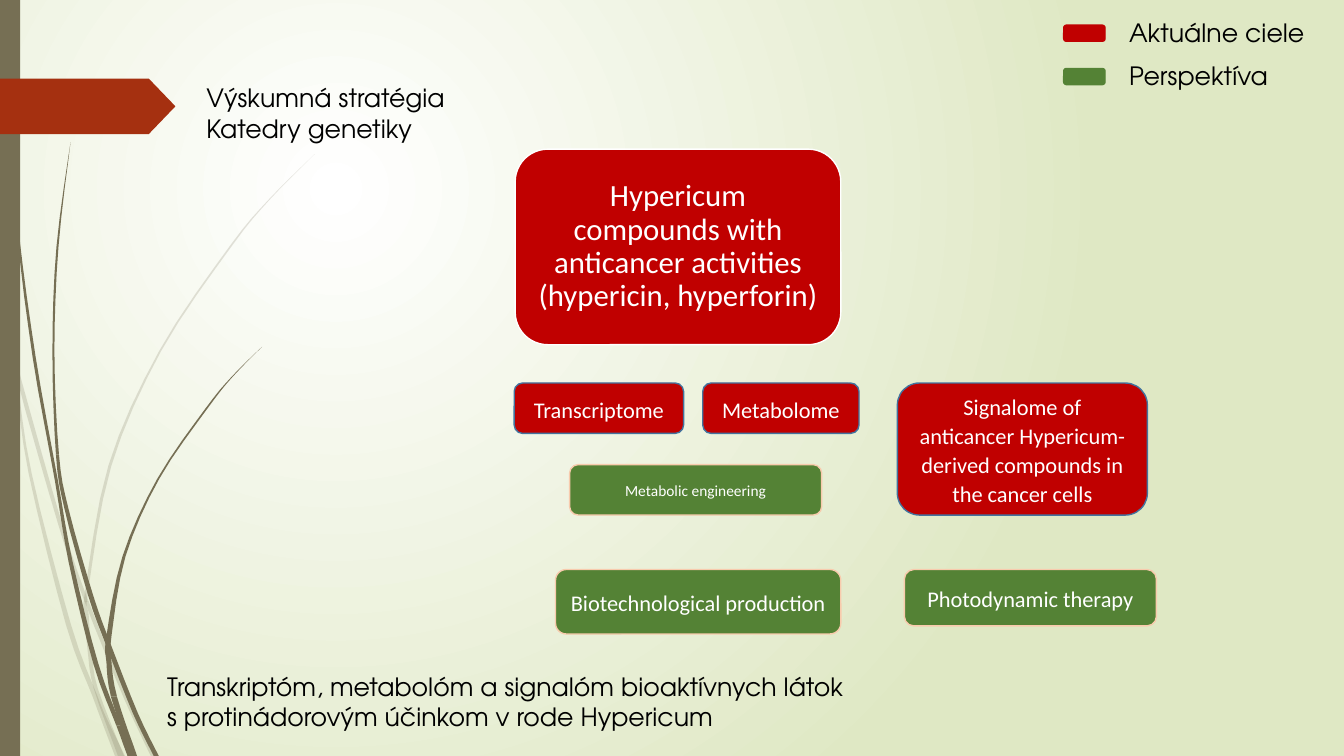
from dataclasses import dataclass

from lxml import etree
from pptx import Presentation
from pptx.dml.color import RGBColor
from pptx.enum.shapes import MSO_SHAPE
from pptx.enum.text import MSO_ANCHOR, PP_ALIGN
from pptx.oxml.ns import qn
from pptx.util import Inches, Pt

RECTANGLE = MSO_SHAPE.RECTANGLE
ROUNDED = MSO_SHAPE.ROUNDED_RECTANGLE
TAG = MSO_SHAPE.PENTAGON
TOP, MIDDLE = MSO_ANCHOR.TOP, MSO_ANCHOR.MIDDLE
LEFT, CENTER = PP_ALIGN.LEFT, PP_ALIGN.CENTER
UNITS_PER_INCH = 1000
CURVE_STEPS = 4


@dataclass(frozen=True)
class Theme:
    white: str = "FFFFFF"
    black: str = "000000"
    meadow: str = "DFE8C4"
    stalk: str = "766F54"
    rust: str = "A53010"
    current: str = "C00000"
    future: str = "548235"
    current_line: str = "43739E"
    future_line: str = "F8CBAD"
    heading_font: str = "TeX Gyre Adventor"
    box_font: str = "Calibri"
    heading_size: int = 18
    lead_size: int = 22
    box_size: int = 16
    small_size: int = 11


THEME = Theme()

# Each blade pairs its joints with knots of centre x, y and width, tip to root.
PALE_BLADES = [
    ((1, 6), [(0.02, 2.9, 0.03), (0.11, 3.5, 0.02), (0.16, 3.76, 0.02), (0.3, 4.7, 0.03),
              (0.68, 6.2, 0.05), (0.94, 6.9, 0.05), (1.03, 7.13, 0.06), (1.19, 7.5, 0.1)]),
    ((3,), [(0.14, 3.45, 0), (0.19, 3.76, 0.04), (0.6, 5.21, 0.04), (0.86, 5.97, 0.04),
            (1.25, 6.93, 0.04), (1.52, 7.5, 0.05)]),
    ((5, 6, 8), [(3.12, 1.53, 0), (2.68, 1.97, 0.01), (2.29, 2.44, 0.02), (1.59, 3.48, 0.02),
                 (1.09, 4.62, 0.03), (0.86, 5.86, 0.03), (0.86, 6.1, 0.04),
                 (0.89, 6.46, 0.04), (0.95, 6.83, 0.04), (1.2, 7.5, 0.06)]),
]
DARK_BLADES = [
    ((4, 7), [(0.04, 0, 0.01), (0.07, 1.1, 0.01), (0.18, 2.33, 0.02), (0.34, 3.55, 0.03),
              (0.56, 4.77, 0.03), (0.7, 5.57, 0.04), (0.95, 6.58, 0.05),
              (1.18, 7.2, 0.05), (1.31, 7.5, 0.09)]),
    ((3, 4, 6), [(0.7, 1.41, 0), (0.57, 2.45, 0.02), (0.53, 3.49, 0.02), (0.57, 4.51, 0.03),
                 (0.66, 5.05, 0.04), (0.9, 5.91, 0.05), (1.08, 6.41, 0.05),
                 (1.34, 7.07, 0.05), (1.55, 7.5, 0.05)]),
    ((5, 6, 7), [(2.6, 3.44, 0), (2.31, 3.73, 0.01), (2.05, 4.05, 0.02), (1.57, 4.75, 0.02),
                 (1.23, 5.52, 0.03), (1.08, 6.32, 0.05), (1.08, 6.56, 0.05),
                 (1.13, 6.91, 0.06), (1.33, 7.5, 0.06)]),
]


def add_text(shape, text, font=THEME.box_font, size=THEME.box_size, color=THEME.white,
             align=CENTER, anchor=MIDDLE, inset=None, spacing=None, after=None):
    frame = shape.text_frame
    frame.word_wrap = True
    frame.vertical_anchor = anchor
    if inset is not None:
        frame.margin_left = frame.margin_right = Inches(inset)
        frame.margin_top = frame.margin_bottom = Inches(inset)
    frame.text = text
    for paragraph in frame.paragraphs:
        paragraph.alignment = align
        paragraph.line_spacing = spacing
        paragraph.space_after = after
        paragraph.font.name = font
        paragraph.font.size = Pt(size)
        paragraph.font.color.rgb = RGBColor.from_string(color)


def style(shape, fill, line=None):
    shape.shadow.inherit = False
    shape.fill.solid()
    shape.fill.fore_color.rgb = RGBColor.from_string(fill)
    if line:
        shape.line.color.rgb = RGBColor.from_string(line)
        shape.line.width = Pt(1)
    else:
        shape.line.fill.background()


def add_block(slide, kind, box, fill, line=None):
    shape = slide.shapes.add_shape(kind, *map(Inches, box))
    style(shape, fill, line)
    return shape


def add_heading(slide, box, text, anchor=TOP):
    shape = slide.shapes.add_textbox(*map(Inches, box))
    add_text(shape, text, font=THEME.heading_font, size=THEME.heading_size,
             color=THEME.black, align=LEFT, anchor=anchor)


def paint_background(slide):
    fill = slide.background.fill
    fill.gradient()
    for stop, color in zip(fill.gradient_stops, (THEME.white, THEME.meadow)):
        stop.color.rgb = RGBColor.from_string(color)
    gradient = slide.element.find(".//" + qn("a:gradFill"))
    gradient.remove(gradient.find(qn("a:lin")))
    circle = etree.Element(qn("a:path"), path="circle")
    etree.SubElement(circle, qn("a:fillToRect"), l="50000", t="50000", r="100000", b="100000")
    gradient.find(qn("a:gsLst")).addnext(circle)


def smooth(knots):
    padded = [knots[0], *knots, knots[-1]]
    for before, start, end, after in zip(padded, padded[1:], padded[2:], padded[3:]):
        for step in range(CURVE_STEPS):
            t = step / CURVE_STEPS
            yield tuple(
                b + t * (c - a) / 2 + t**2 * (2 * a - 5 * b + 4 * c - d) / 2
                + t**3 * (3 * b - a - 3 * c + d) / 2
                for a, b, c, d in zip(before, start, end, after))
    yield knots[-1]


def add_section(slide, origin, curve, opacity):
    left, top = origin
    edges = [(left + x - w / 2, top + y) for x, y, w in curve]
    edges += [(left + x + w / 2, top + y) for x, y, w in reversed(curve)]
    points = [(x * UNITS_PER_INCH, y * UNITS_PER_INCH) for x, y in edges]
    builder = slide.shapes.build_freeform(*points[0], scale=Inches(1) / UNITS_PER_INCH)
    builder.add_line_segments(points[1:], close=True)
    section = builder.convert_to_shape()
    style(section, THEME.stalk)
    if opacity < 100:
        color = section.element.spPr.find(".//" + qn("a:srgbClr"))
        etree.SubElement(color, qn("a:alpha"), val=str(opacity * 1000))


def add_blade(slide, origin, joints, knots, opacity):
    curve = list(smooth(knots))
    for start, end in zip((0, *joints), (*joints, len(knots) - 1)):
        add_section(slide, origin, curve[start * CURVE_STEPS:end * CURVE_STEPS + 1], opacity)


def add_side_decoration(slide, box):
    left, top, width, height = box
    for blades, opacity in ((PALE_BLADES, 20), (DARK_BLADES, 100)):
        for joints, knots in blades:
            add_blade(slide, (left, top), joints, knots, opacity)
    add_block(slide, RECTANGLE, (left, top, 0.2, height), THEME.stalk)
    tag = add_block(slide, TAG, (left, top + 0.78, width, 0.55), THEME.rust)
    tag.adjustments[0] = 0.48


def add_strategy_map(slide, box):
    left, top = box[:2]
    lead = add_block(slide, ROUNDED, (left + 0.01, top, 3.23, 1.94), THEME.current, THEME.white)
    add_text(lead, "Hypericum compounds with anticancer activities (hypericin, hyperforin)",
             size=THEME.lead_size, inset=0.09, spacing=0.9)
    current = (THEME.current, THEME.current_line)
    future = (THEME.future, THEME.future_line)
    for x, y, width, height, colors, size, text in (
        (0, 2.32, 1.68, 0.5, current, THEME.box_size, "Transcriptome"),
        (1.87, 2.32, 1.55, 0.5, current, THEME.box_size, "Metabolome"),
        (3.8, 2.32, 2.48, 1.31, current, THEME.box_size,
         "Signalome of anticancer Hypericum-derived compounds in the cancer cells"),
        (0.55, 3.13, 2.5, 0.5, future, THEME.small_size, "Metabolic engineering"),
        (0.41, 4.17, 2.83, 0.64, future, THEME.box_size, "Biotechnological production"),
        (3.87, 4.17, 2.5, 0.56, future, THEME.box_size, "Photodynamic therapy"),
    ):
        block = add_block(slide, ROUNDED, (left + x, top + y, width, height), *colors)
        add_text(block, text, size=size, spacing=1.07, after=Pt(8))


def add_legend(slide, box):
    left, top, width, height = box
    entries = ((THEME.current, "Aktuálne ciele"), (THEME.future, "Perspektíva"))
    pitch = height / len(entries)
    for index, (color, label) in enumerate(entries):
        row = top + index * pitch
        add_block(slide, ROUNDED, (left, row + 0.13, 0.41, 0.16), color, color)
        add_heading(slide, (left + 0.55, row, width - 0.55, 0.4), label)


def main():
    presentation = Presentation()
    presentation.slide_width = Inches(13.33)
    presentation.slide_height = Inches(7.5)
    slide = presentation.slides.add_slide(presentation.slide_layouts[6])
    paint_background(slide)
    add_side_decoration(slide, (0, 0, 1.74, 7.5))
    add_heading(slide, (1.95, 0.77, 3.7, 0.71), "Výskumná stratégia\nKatedry genetiky")
    add_strategy_map(slide, (5.1, 1.48, 6.37, 4.81))
    add_legend(slide, (10.55, 0.12, 2.78, 0.86))
    add_heading(slide, (1.56, 6.6, 7.1, 0.71),
                "Transkriptóm, metabolóm a signalóm bioaktívnych látok\n"
                "s protinádorovým účinkom v rode Hypericum", anchor=MIDDLE)
    presentation.save("out.pptx")


if __name__ == "__main__":
    main()
